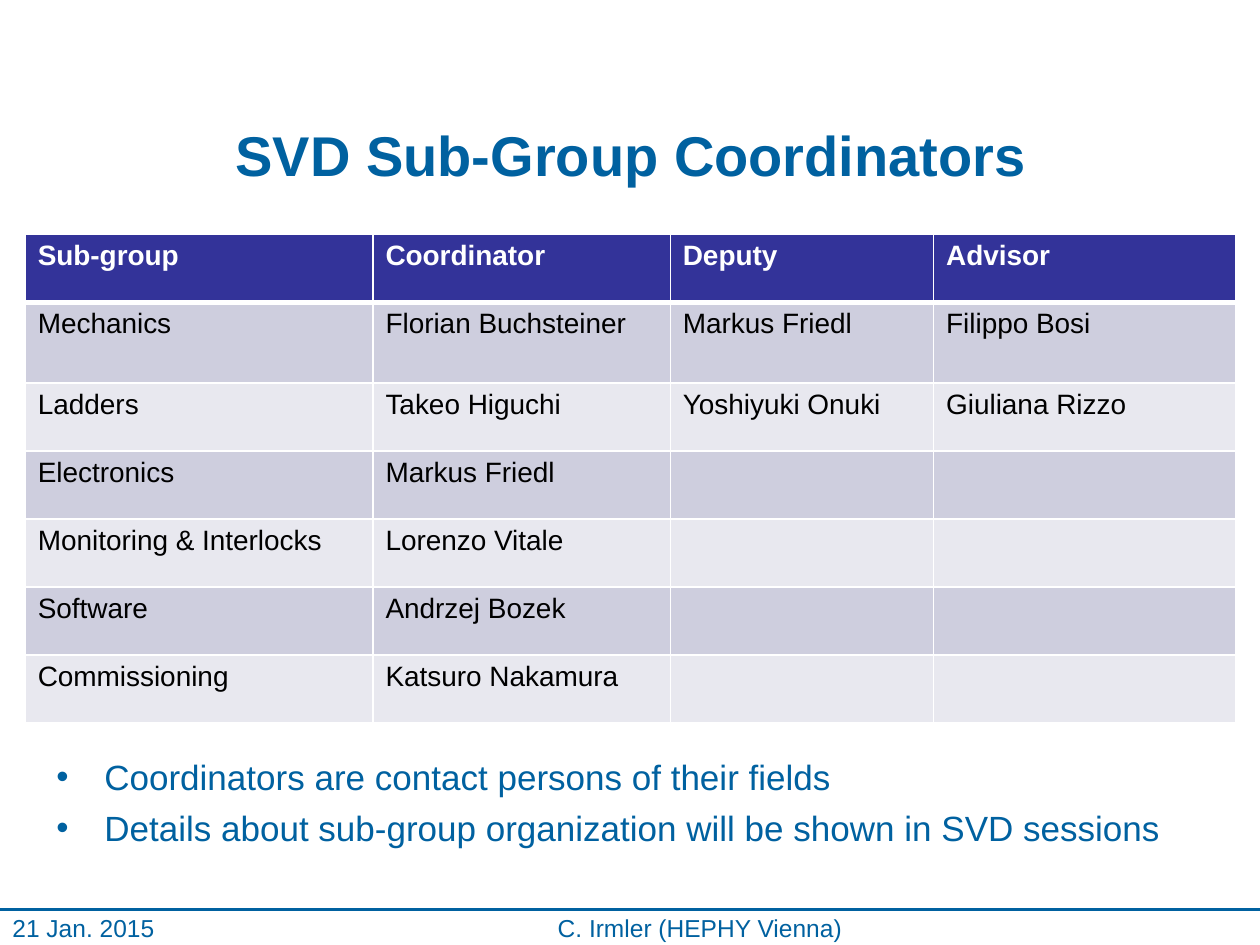
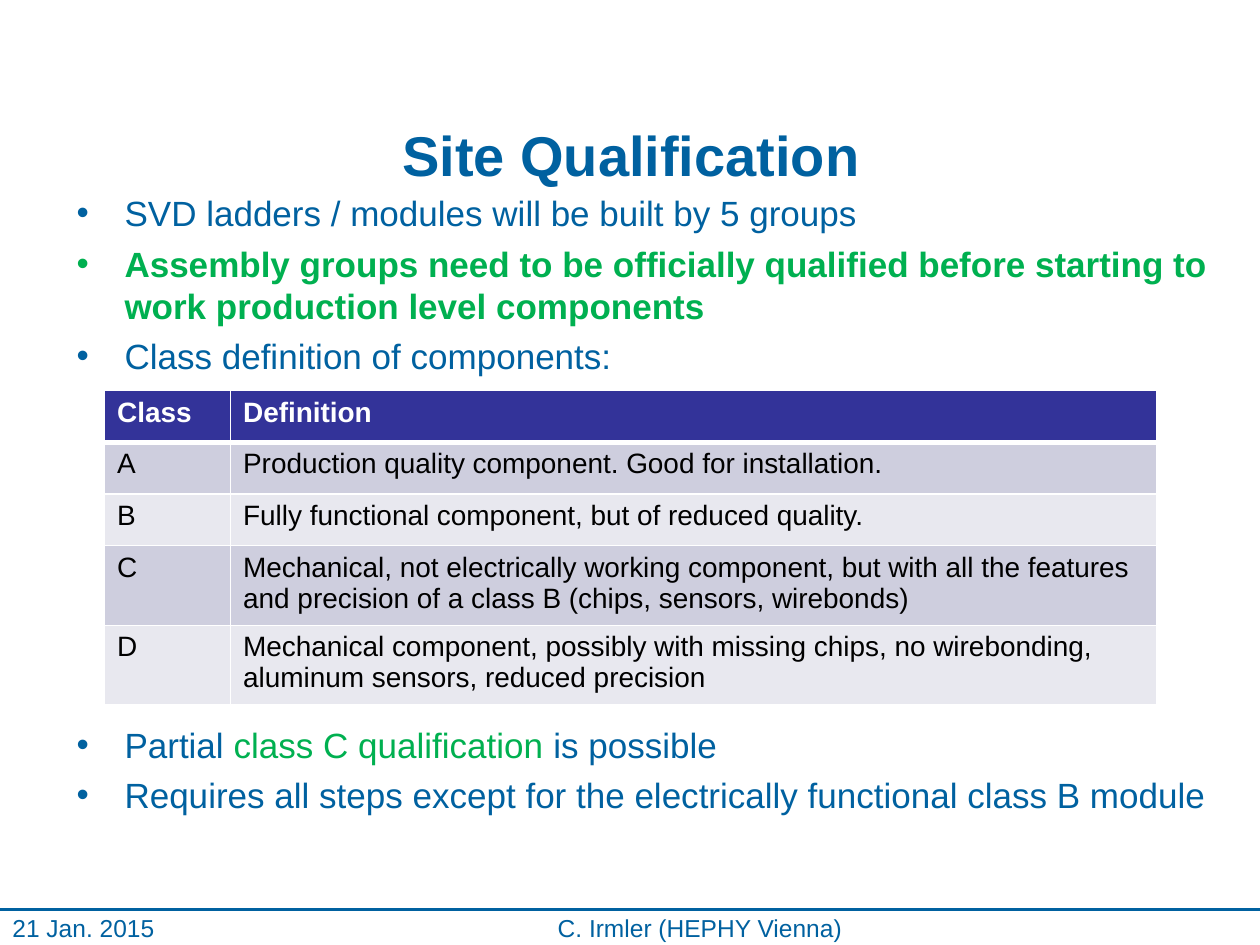
"""Build two slides on SVD sub-group coordinators and site qualification."""
from lxml.etree import SubElement
from pptx import Presentation
from pptx.dml.color import RGBColor
from pptx.enum.shapes import MSO_CONNECTOR
from pptx.enum.text import MSO_ANCHOR, PP_ALIGN
from pptx.oxml.ns import qn
from pptx.util import Inches, Pt

FONT = "Arial"
BLUE = RGBColor(0x00, 0x61, 0xA0)
GREEN = RGBColor(0x00, 0xB0, 0x50)
WHITE = RGBColor(0xFF, 0xFF, 0xFF)
BLACK = RGBColor(0x00, 0x00, 0x00)
HEADER = RGBColor(0x33, 0x33, 0x99)
BANDS = (RGBColor(0xE8, 0xE8, 0xEF), RGBColor(0xCE, 0xCE, 0xDE))

FOOTER_TOP = 7.22
DATE = "21 Jan. 2015"
AUTHOR = "C. Irmler (HEPHY Vienna)"

SLIDES = [
    {
        "title": "SVD Sub-Group Coordinators",
        "table": {
            "at": (0.2, 1.86),
            "cols": [2.76, 2.36, 2.09, 2.4],
            "heights": [0.54, 0.64] + [0.54] * 5,
            "rows": [
                ("Sub-group", "Coordinator", "Deputy", "Advisor"),
                ("Mechanics", "Florian Buchsteiner", "Markus Friedl", "Filippo Bosi"),
                ("Ladders", "Takeo Higuchi", "Yoshiyuki Onuki", "Giuliana Rizzo"),
                ("Electronics", "Markus Friedl", "", ""),
                ("Monitoring & Interlocks", "Lorenzo Vitale", "", ""),
                ("Software", "Andrzej Bozek", "", ""),
                ("Commissioning", "Katsuro Nakamura", "", ""),
            ],
        },
        "bullets": [
            ((0.35, 5.95, 9.53, 1.02), [
                [("Coordinators are contact persons of their fields", BLUE, False)],
                [("Details about sub-group organization will be shown in SVD sessions",
                  BLUE, False)],
            ]),
        ],
    },
    {
        "title": "Site Qualification",
        "table": {
            "at": (0.83, 3.1),
            "cols": [1, 7.35],
            "heights": [0.41] * 5,
            "rows": [
                ("Class", "Definition"),
                ("A", "Production quality component. Good for installation."),
                ("B", "Fully functional component, but of reduced quality."),
                ("C", "Mechanical, not electrically working component, but with all "
                      "the features and precision of a class B (chips, sensors, wirebonds)"),
                ("D", "Mechanical component, possibly with missing chips, no wirebonding, "
                      "aluminum sensors, reduced precision"),
            ],
        },
        "bullets": [
            ((0.51, 1.47, 9.21, 1.6), [
                [("SVD ladders / modules will be built by 5 groups", BLUE, False)],
                [("Assembly groups need to be officially qualified before starting to "
                  "work production level components", GREEN, True)],
                [("Class definition of components:", BLUE, False)],
            ]),
            ((0.51, 5.69, 9.21, 1.02), [
                [("Partial ", BLUE, False), ("class C qualification ", GREEN, False),
                 ("is possible", BLUE, False)],
                [("Requires all steps except for the electrically functional class B module",
                  BLUE, False)],
            ]),
        ],
    },
]


def style(r, size, color, bold=False):
    r.font.name = FONT
    r.font.size = Pt(size)
    r.font.color.rgb = color
    r.font.bold = bold


def add_box(s, box, anchor=MSO_ANCHOR.TOP):
    tf = s.shapes.add_textbox(*map(Inches, box)).text_frame
    tf.word_wrap = True
    tf.vertical_anchor = anchor
    return tf


def add_line_of_text(s, box, text, size, align=PP_ALIGN.LEFT, bold=False):
    p = add_box(s, box, MSO_ANCHOR.MIDDLE).paragraphs[0]
    p.text = text
    p.alignment = align
    style(p.runs[0], size, BLUE, bold)


def add_bullets(s, box, items):
    tf = add_box(s, box)
    for i, parts in enumerate(items):
        p = tf.add_paragraph() if i else tf.paragraphs[0]
        pPr = p._p.get_or_add_pPr()
        pPr.set("marL", str(Inches(0.38)))
        pPr.set("indent", str(-Inches(0.38)))
        SubElement(pPr, qn("a:buFont"), typeface=FONT)
        SubElement(pPr, qn("a:buChar"), char="•")
        if i:
            p.space_before = Pt(5)
        for text, color, bold in parts:
            r = p.add_run()
            r.text = text
            style(r, 20, color, bold)


def set_borders(cell, row):
    tcPr = cell._tc.get_or_add_tcPr()
    widths = {"L": 1, "R": 1, "T": 3 if row == 1 else 1, "B": 1 if row else 3}
    for side, width in widths.items():
        ln = SubElement(tcPr, qn(f"a:ln{side}"), w=str(Pt(width)))
        fill = SubElement(ln, qn("a:solidFill"))
        SubElement(fill, qn("a:srgbClr"), val=str(WHITE))


def add_table(s, at, cols, heights, rows):
    size = (sum(cols), sum(heights))
    table = s.shapes.add_table(len(rows), len(cols), *map(Inches, at + size)).table
    table.horz_banding = False
    for col, width in zip(table.columns, cols):
        col.width = Inches(width)
    for i, texts in enumerate(rows):
        table.rows[i].height = Inches(heights[i])
        for cell, text in zip(table.rows[i].cells, texts):
            set_borders(cell, i)
            cell.fill.solid()
            cell.fill.fore_color.rgb = BANDS[i % 2] if i else HEADER
            cell.text_frame.text = text
            for r in cell.text_frame.paragraphs[0].runs:
                style(r, 16, BLACK if i else WHITE, i == 0)


def add_frame(s, title):
    y = Inches(FOOTER_TOP)
    line = s.shapes.add_connector(MSO_CONNECTOR.STRAIGHT, 0, y, Inches(10), y)
    line.line.color.rgb = BLUE
    line.line.width = Pt(2)
    SubElement(line._element.spPr, qn("a:effectLst"))
    add_line_of_text(s, (0.51, 0.91, 9, 0.63), title, 32, PP_ALIGN.CENTER, True)
    add_line_of_text(s, (3.9, FOOTER_TOP, 3.31, 0.28), AUTHOR, 14, PP_ALIGN.CENTER)
    add_line_of_text(s, (0, FOOTER_TOP, 3.98, 0.28), DATE, 14)


def main():
    prs = Presentation()
    prs.slide_width, prs.slide_height = Inches(10), Inches(7.5)
    for content in SLIDES:
        s = prs.slides.add_slide(prs.slide_layouts[6])
        add_frame(s, content["title"])
        for box, items in content["bullets"]:
            add_bullets(s, box, items)
        add_table(s, **content["table"])
    prs.save("out.pptx")


if __name__ == "__main__":
    main()
